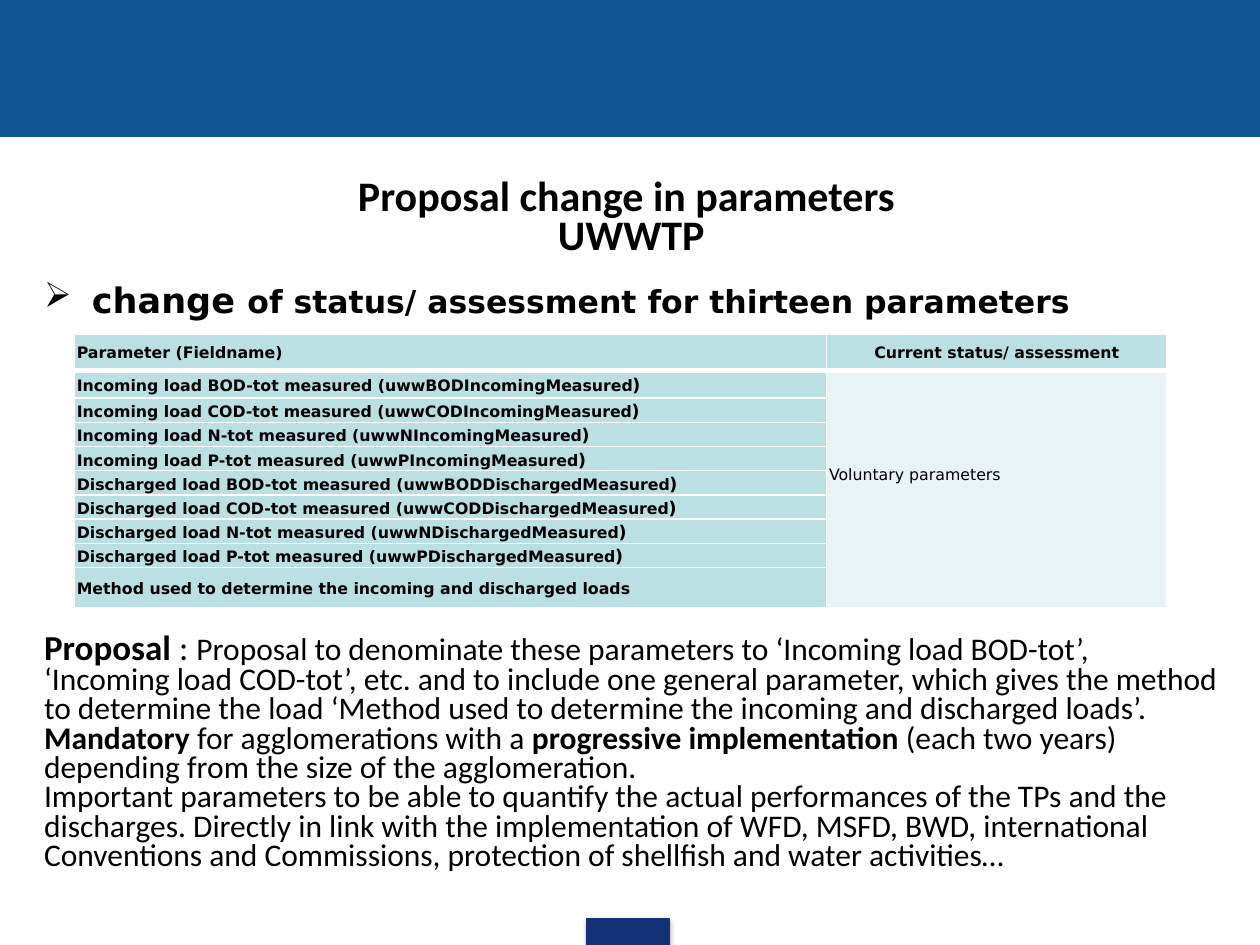
import pptx
import pptx.dml.color
import pptx.enum.shapes
import pptx.enum.text
import pptx.oxml
import pptx.oxml.ns
import pptx.util
from pptx.util import Inches

COLORS = {
    "band": "0F5494",
    "tab": "133176",
    "text": "000000",
    "teal": "BBE0E3",
    "pale": "E7F3F4",
    "border": "FFFFFF",
}
NAMESPACE = pptx.oxml.ns.nsdecls("a")
ALIGN = pptx.enum.text.PP_ALIGN


def rgb(name):
    return pptx.dml.color.RGBColor.from_string(COLORS[name])


def write_text(frame, paragraphs, font="Calibri", align=ALIGN.LEFT, spacing=0.78,
               indent=0, hanging=0, bullet=None):
    for index, runs in enumerate(paragraphs):
        paragraph = frame.add_paragraph() if index else frame.paragraphs[0]
        paragraph.alignment = align
        paragraph.line_spacing = spacing
        properties = paragraph._p.get_or_add_pPr()
        properties.set("marL", str(Inches(indent)))
        properties.set("indent", str(Inches(-hanging)))
        if bullet:
            properties.append(pptx.oxml.parse_xml(f'<a:buChar {NAMESPACE} char="{bullet}"/>'))
        for text, size, bold in runs:
            run = paragraph.add_run()
            run.text = text
            run.font.name = font
            run.font.size = pptx.util.Pt(size)
            run.font.bold = bold
            run.font.color.rgb = rgb("text")


presentation = pptx.Presentation()
presentation.slide_width = Inches(10)
presentation.slide_height = Inches(7.5)
slide = presentation.slides.add_slide(presentation.slide_layouts[6])

for color, left, top, width, height in [
    ("band", 0, 0, 10, 1.08),
    ("tab", 4.66, 7.29, 0.65, 0.21),
]:
    shape = slide.shapes.add_shape(
        pptx.enum.shapes.MSO_SHAPE.RECTANGLE,
        Inches(left), Inches(top), Inches(width), Inches(height))
    shape.shadow.inherit = False
    shape.fill.solid()
    shape.fill.fore_color.rgb = rgb(color)
    shape.line.color.rgb = rgb(color)
    shape.line.width = pptx.util.Pt(0.75)

effects = shape._element.spPr.find(pptx.oxml.ns.qn("a:effectLst"))
effects.append(pptx.oxml.parse_xml(
    f'<a:outerShdw {NAMESPACE} blurRad="39370" dist="22860" dir="5400000" rotWithShape="0">'
    '<a:srgbClr val="000000"><a:alpha val="35000"/></a:srgbClr></a:outerShdw>'))

title = [
    [("Proposal change in parameters ", 24, True)],
    [("UWWTP", 24, True)],
]
heading = [
    [("change ", 20, True), ("of status/ assessment for thirteen parameters", 18, True)],
]
proposal = [
    [("Proposal ", 20, True), (": ", 20, False),
     ("Proposal to denominate these parameters to ‘Incoming load BOD-tot’, "
      "‘Incoming load COD-tot’, etc. and to include one general parameter, which gives "
      "the method to determine the load ‘Method used to determine the incoming and "
      "discharged loads’.", 18, False)],
    [("Mandatory ", 18, True), ("for agglomerations with a ", 18, False),
     ("progressive implementation ", 18, True),
     ("(each two years) depending from the size of the agglomeration.", 18, False)],
    [("Important parameters to be able to quantify the actual performances of the TPs and "
      "the discharges. Directly in link with the implementation of WFD, MSFD, BWD, "
      "international Conventions and Commissions, protection of shellfish and water "
      "activities…", 18, False)],
]
for top, height, paragraphs, text_format in [
    (1.39, 0.71, title, dict(align=ALIGN.CENTER, indent=0.27, hanging=0.27)),
    (2.24, 0.35, heading, dict(font="DejaVu Sans", indent=0.38, hanging=0.38, bullet="➢")),
    (4.99, 2, proposal, {}),
]:
    box = slide.shapes.add_textbox(Inches(0.26), Inches(top), Inches(9.5), Inches(height))
    frame = box.text_frame
    frame.word_wrap = True
    frame.margin_left = frame.margin_right = Inches(0.09)
    frame.margin_top = frame.margin_bottom = Inches(0.04)
    write_text(frame, paragraphs, **text_format)

row_heights = [0.29, 0.22] + [0.16] * 7 + [0.32]
table = slide.shapes.add_table(
    len(row_heights), 2, Inches(0.59), Inches(2.65), Inches(8.67), Inches(2.18)).table
for column, width in zip(table.columns, [5.97, 2.7]):
    column.width = Inches(width)
for row, height in zip(table.rows, row_heights):
    row.height = Inches(height)

for row_index in range(len(row_heights)):
    for column_index in range(2):
        cell = table.cell(row_index, column_index)
        cell.margin_left = cell.margin_right = Inches(0.02)
        cell.margin_top = cell.margin_bottom = 0
        cell.vertical_anchor = pptx.enum.text.MSO_ANCHOR.MIDDLE
        for side in "LRTB":
            thick = (row_index, side) in [(0, "B"), (1, "T")]
            cell._tc.get_or_add_tcPr().append(pptx.oxml.parse_xml(
                f'<a:ln{side} {NAMESPACE} w="{38100 if thick else 12700}"><a:solidFill>'
                f'<a:srgbClr val="{COLORS["border"]}"/></a:solidFill></a:ln{side}>'))
        cell.fill.solid()
        cell.fill.fore_color.rgb = rgb("pale" if row_index and column_index else "teal")

fields = [
    [(f"{direction} load {substance}-tot measured "
      f"(uww{substance}{direction}Measured", 9, True), (")", 10, True)]
    for direction in ["Incoming", "Discharged"]
    for substance in ["BOD", "COD", "N", "P"]
]
first_column = [
    [("Parameter (Fieldname)", 9, True)],
    *fields,
    [("Method used to determine the incoming and discharged loads", 9, True)],
]
for row_index, runs in enumerate(first_column):
    write_text(table.cell(row_index, 0).text_frame, [runs], font="DejaVu Sans", spacing=1.15)
write_text(table.cell(0, 1).text_frame, [[("Current status/ assessment", 9, True)]],
           font="DejaVu Sans", align=ALIGN.CENTER, spacing=1.15)

status = table.cell(1, 1)
status.merge(table.cell(len(row_heights) - 1, 1))
status.margin_bottom = Inches(0.25)
write_text(status.text_frame, [[("Voluntary parameters", 9, False)]],
           font="DejaVu Sans", spacing=1.15)

presentation.save("out.pptx")
